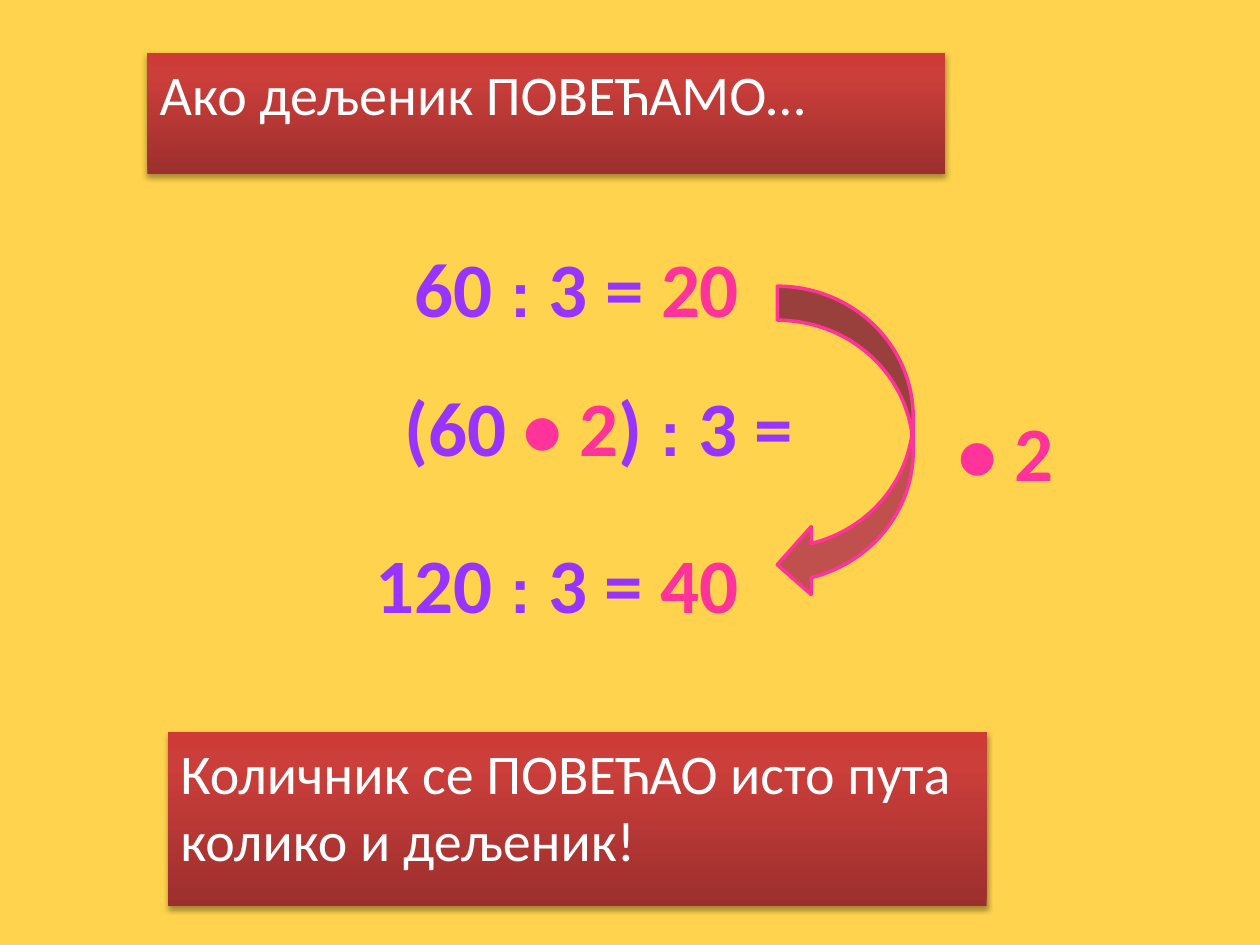
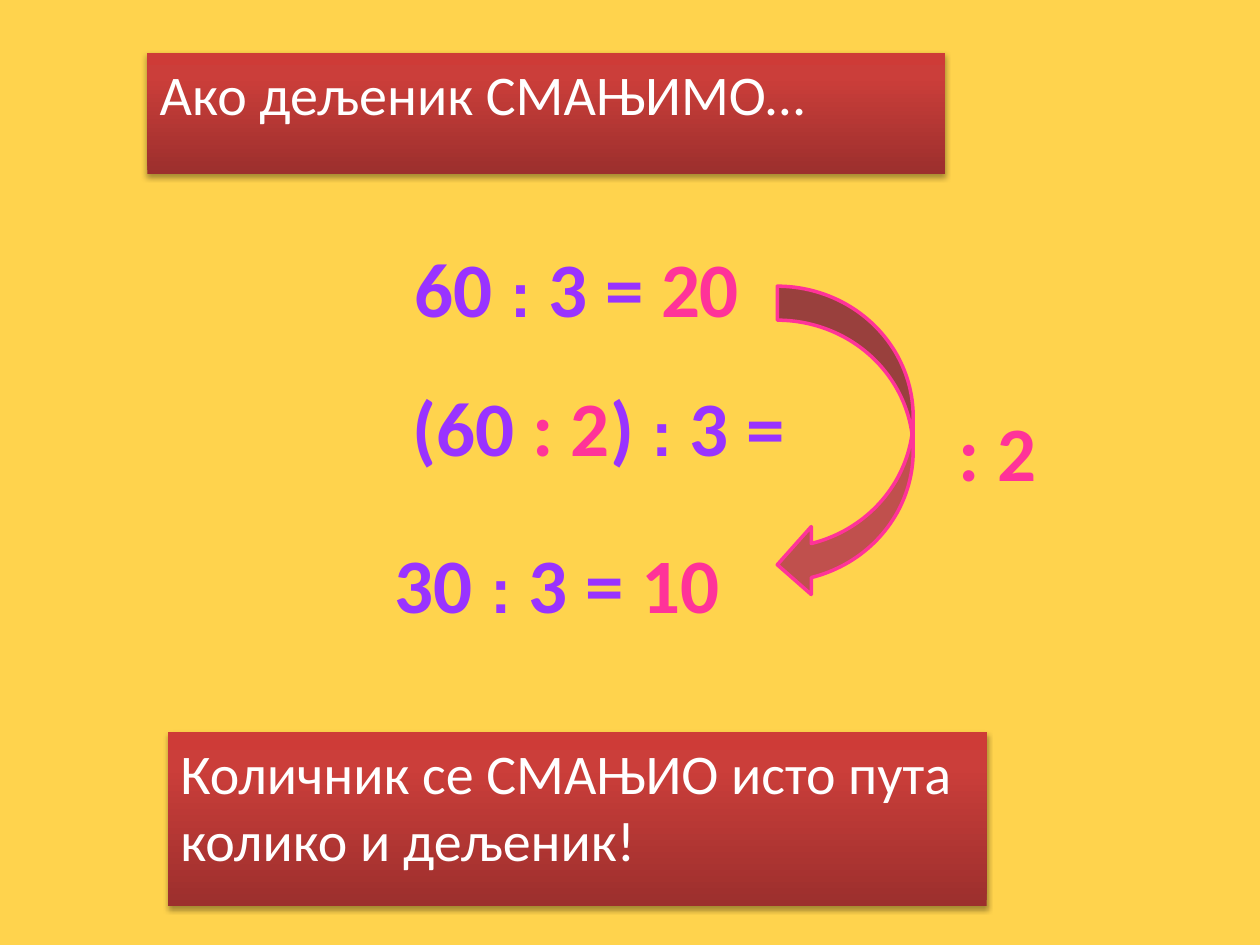
"""Build two slides on how changing the dividend changes the quotient."""
import copy

import pptx
import pptx.dml.color
import pptx.enum.shapes
import pptx.enum.text
import pptx.oxml
import pptx.oxml.ns
import pptx.util

Cm = pptx.util.Cm
Pt = pptx.util.Pt
RGBColor = pptx.dml.color.RGBColor
Anchor = pptx.enum.text.MSO_ANCHOR
Align = pptx.enum.text.PP_ALIGN
AutoSize = pptx.enum.text.MSO_AUTO_SIZE

YELLOW = RGBColor(0xFF, 0xD3, 0x4D)
VIOLET = RGBColor(0x99, 0x33, 0xFF)
PINK = RGBColor(0xFF, 0x33, 0x99)
BRICK = RGBColor(0xC0, 0x50, 0x4D)
WHITE = RGBColor(0xFF, 0xFF, 0xFF)
BANNER_STOPS = (
    (0, RGBColor(0x9C, 0x2F, 0x2D)),
    (0.8, RGBColor(0xCB, 0x3E, 0x3A)),
    (1, RGBColor(0xCE, 0x3B, 0x37)),
)
BANNER_SHADOW = (
    f'<a:outerShdw {pptx.oxml.ns.nsdecls("a")} blurRad="{Pt(3.1)}" dist="{Pt(1.8)}" '
    'dir="5400000" rotWithShape="0">'
    '<a:srgbClr val="000000"><a:alpha val="35000"/></a:srgbClr></a:outerShdw>'
)

NUMBER = ({"name": "Calibri", "size": Pt(44), "bold": True}, VIOLET)
DIVISION = ({"name": "Arial", "size": Pt(36), "bold": True}, VIOLET)
CHANGE = ({"name": "Calibri", "size": Pt(44), "bold": True}, PINK)
STATEMENT = ({"name": "Calibri", "size": Pt(32), "bold": False}, WHITE)

EQUATION_FRAME = {"word_wrap": True, "auto_size": AutoSize.NONE,
                  "vertical_anchor": Anchor.MIDDLE}
BANNER_FRAME = {**EQUATION_FRAME, "vertical_anchor": Anchor.TOP}
FACTOR_FRAME = {**BANNER_FRAME, "auto_size": AutoSize.SHAPE_TO_FIT_TEXT}
CENTRED = {"alignment": Align.CENTER}
BANNER_PARAGRAPH = {"alignment": Align.LEFT, "space_before": Pt(6.4)}

EQUATION_SIZE = (22.86, 3.18)
FIRST_PLACE = (0.2, 4.19, *EQUATION_SIZE)
CHANGED_PLACE = (0.64, 6.99, *EQUATION_SIZE)
LAST_PLACE = (-0.2, 10.16, *EQUATION_SIZE)
CONDITION_PLACE = (2.97, 1.07, 16.08, 2.44)
CONCLUSION_PLACE = (3.38, 14.76, 16.51, 3.51)
ARROW_PLACE = (15.67, 5.77, 2.74, 6.3)
FACTOR_PLACE = (19.08, 8.03, 2.54, 2.13)

LESSONS = (
    {"condition": "ПОВЕЋАМО", "outcome": "ПОВЕЋАО", "factor": "• 2",
     "dividend": "120", "quotient": "40"},
    {"condition": "СМАЊИМО", "outcome": "СМАЊИО", "factor": ": 2",
     "dividend": "30", "quotient": "10"},
)


def apply(target, values):
    """Set each attribute in values on the target."""
    for attribute, value in values.items():
        setattr(target, attribute, value)


def move(placeholder, place):
    """Give a placeholder its position and size in centimetres."""
    apply(placeholder, dict(zip(("left", "top", "width", "height"), map(Cm, place))))


def write(holder, pieces, frame_values, paragraph_values):
    """Write styled pieces as one paragraph."""
    frame = holder.text_frame
    apply(frame, frame_values)
    paragraph = frame.paragraphs[0]
    apply(paragraph, paragraph_values)
    for text, (font_values, color) in pieces:
        run = paragraph.add_run()
        run.text = text
        apply(run.font, font_values)
        run.font.color.rgb = color


def add_text_area(slide, place):
    """Add an empty text box at a place in centimetres."""
    return slide.shapes.add_textbox(*map(Cm, place))


def division(dividend, quotient):
    """Return the styled pieces of a division by three with its result."""
    return ((f"{dividend} ", NUMBER), (": ", DIVISION), ("3 = ", NUMBER), (quotient, CHANGE))


def changed_division(factor):
    """Return the styled pieces of the division with a changed dividend."""
    return (("(60 ", NUMBER), (factor, CHANGE), (") ", NUMBER),
            (": ", DIVISION), ("3 =", NUMBER))


def style_banner(banner, statement):
    """Give a banner its red gradient, soft shadow and white statement."""
    banner.fill.gradient()
    banner.fill.gradient_angle = 90
    first_stop = banner.fill.gradient_stops[0]._gs
    first_stop.addnext(copy.deepcopy(first_stop))
    for stop, (position, color) in zip(banner.fill.gradient_stops, BANNER_STOPS):
        stop.position = position
        stop.color.rgb = color
    banner.shadow.inherit = False
    effects = banner._element.spPr.find(pptx.oxml.ns.qn("a:effectLst"))
    effects.append(pptx.oxml.parse_xml(BANNER_SHADOW))
    write(banner, ((statement, STATEMENT),), BANNER_FRAME, BANNER_PARAGRAPH)


def remove_bullet(paragraph):
    """Turn off the bullet and its hanging indent."""
    properties = paragraph._p.get_or_add_pPr()
    properties.set("marL", "0")
    properties.set("indent", "0")
    properties.append(pptx.oxml.parse_xml(f'<a:buNone {pptx.oxml.ns.nsdecls("a")}/>'))


def add_change_arrow(slide):
    """Add the curved arrow from the first quotient to the last."""
    arrow = slide.shapes.add_shape(
        pptx.enum.shapes.MSO_SHAPE.CURVED_LEFT_ARROW, *map(Cm, ARROW_PLACE))
    arrow.shadow.inherit = False
    arrow.fill.solid()
    arrow.fill.fore_color.rgb = BRICK
    arrow.line.color.rgb = PINK
    arrow.line.width = Pt(2)


def add_lesson(deck, lesson):
    """Add one slide with its condition, three equations and conclusion."""
    slide = deck.slides.add_slide(deck.slide_layouts[1])
    changed, conclusion = slide.placeholders
    move(changed, CHANGED_PLACE)
    write(changed, changed_division(lesson["factor"]), EQUATION_FRAME, CENTRED)

    move(conclusion, CONCLUSION_PLACE)
    style_banner(conclusion, f"Количник се {lesson['outcome']} исто пута колико и дељеник!")
    remove_bullet(conclusion.text_frame.paragraphs[0])

    style_banner(add_text_area(slide, CONDITION_PLACE),
                 f"Ако дељеник {lesson['condition']}…")
    for place, dividend, quotient in (
        (FIRST_PLACE, "60", "20"),
        (LAST_PLACE, lesson["dividend"], lesson["quotient"]),
    ):
        write(add_text_area(slide, place), division(dividend, quotient),
              EQUATION_FRAME, CENTRED)
    add_change_arrow(slide)
    write(add_text_area(slide, FACTOR_PLACE), ((lesson["factor"], CHANGE),),
          FACTOR_FRAME, {"alignment": Align.LEFT})


def main():
    """Create the deck and save it."""
    deck = pptx.Presentation()
    apply(deck, {"slide_width": Cm(25.4), "slide_height": Cm(19.05)})
    background = deck.slide_master.background.fill
    background.solid()
    background.fore_color.rgb = YELLOW
    for lesson in LESSONS:
        add_lesson(deck, lesson)
    deck.save("out.pptx")


if __name__ == "__main__":
    main()
